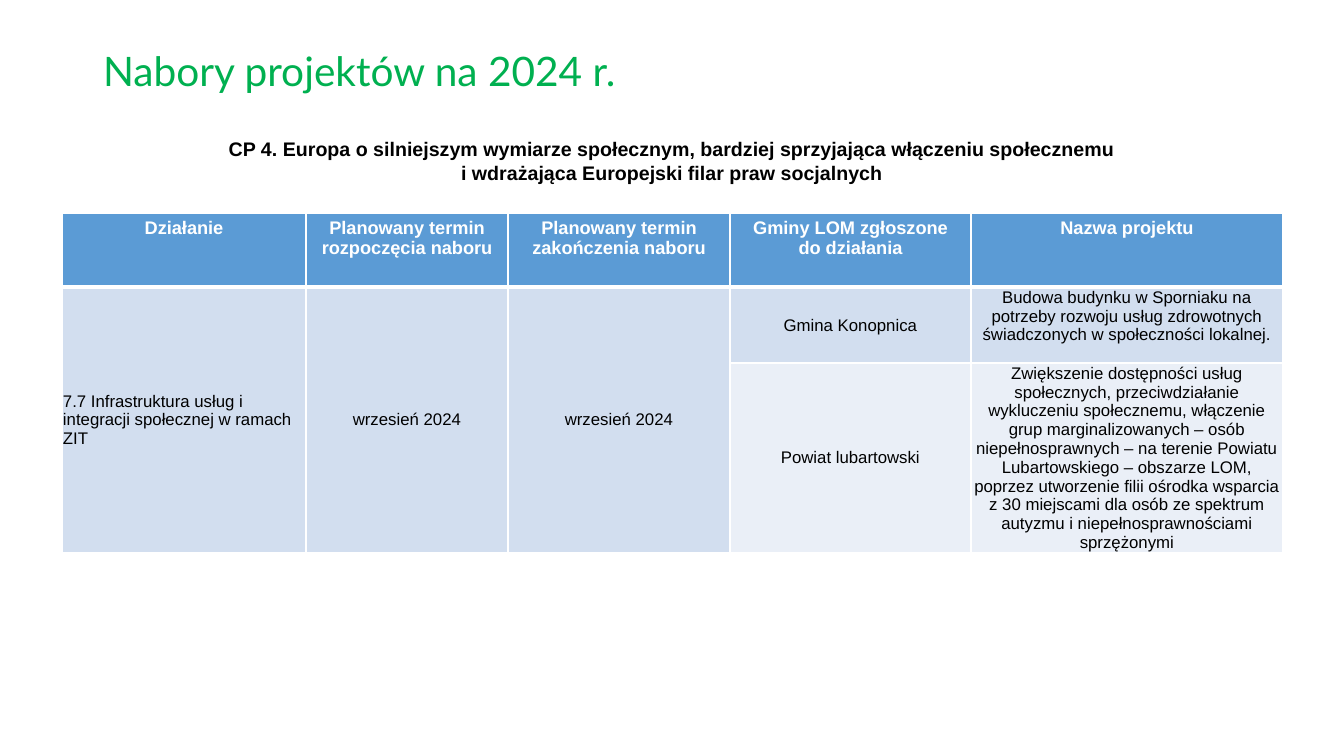
from lxml.etree import SubElement
from pptx import Presentation
from pptx.dml.color import RGBColor
from pptx.enum.text import MSO_ANCHOR, MSO_AUTO_SIZE, PP_ALIGN
from pptx.oxml.ns import qn
from pptx.util import Emu, Pt

EMU_PER_PX = 12192000 / 1344
GREEN = RGBColor(0x00, 0xB0, 0x50)
BLACK = RGBColor(0x00, 0x00, 0x00)
WHITE = RGBColor(0xFF, 0xFF, 0xFF)
HEADER_BLUE = RGBColor(0x5B, 0x9B, 0xD5)
BAND_DARK = RGBColor(0xD2, 0xDE, 0xEF)
BAND_LIGHT = RGBColor(0xEA, 0xEF, 0xF7)

COLUMN_WIDTHS = [244, 202, 222, 241, 312]
ROW_HEIGHTS = [74, 76, 189]
ROW_FILLS = [HEADER_BLUE, BAND_DARK, BAND_LIGHT]
MERGED_COLUMNS = 3
ROWS = [
    ["Działanie", "Planowany termin rozpoczęcia naboru",
     "Planowany termin zakończenia naboru",
     "Gminy LOM zgłoszone do działania", "Nazwa projektu"],
    ["7.7 Infrastruktura usług i integracji społecznej w ramach ZIT",
     "wrzesień 2024", "wrzesień 2024", "Gmina Konopnica",
     "Budowa budynku w Sporniaku na potrzeby rozwoju usług zdrowotnych "
     "świadczonych w społeczności lokalnej."],
    ["", "", "", "Powiat lubartowski",
     "Zwiększenie dostępności usług społecznych, przeciwdziałanie "
     "wykluczeniu społecznemu, włączenie grup marginalizowanych – osób "
     "niepełnosprawnych – na terenie Powiatu Lubartowskiego – obszarze LOM, "
     "poprzez utworzenie filii ośrodka wsparcia z 30 miejscami dla osób ze "
     "spektrum autyzmu i niepełnosprawnościami sprzężonymi"],
]
CAPTION = ("CP 4. Europa o silniejszym wymiarze społecznym, bardziej "
           "sprzyjająca włączeniu społecznemu\n"
           "i wdrażająca Europejski filar praw socjalnych")


def px(length):
    return Emu(round(length * EMU_PER_PX))


def write_text(text_frame, text, size, color=BLACK, font="Arial", bold=False,
               align=PP_ALIGN.CENTER, line_spacing=None):
    text_frame.text = text
    for paragraph in text_frame.paragraphs:
        paragraph.alignment = align
        paragraph.line_spacing = line_spacing
        for run in paragraph.runs:
            run.font.size = Pt(size)
            run.font.name = font
            run.font.bold = bold
            run.font.color.rgb = color


def set_title(slide, text):
    title = slide.shapes.title
    title.left, title.top, title.width, title.height = map(px, (93, 0, 1159, 146))
    title.text_frame.vertical_anchor = MSO_ANCHOR.MIDDLE
    write_text(title.text_frame, text, 29, color=GREEN, font="Lato",
               align=PP_ALIGN.LEFT, line_spacing=0.9)


def add_caption(slide, text):
    caption = slide.shapes.add_textbox(px(214), px(132), px(916), px(82))
    caption.text_frame.word_wrap = False
    caption.text_frame.auto_size = MSO_AUTO_SIZE.SHAPE_TO_FIT_TEXT
    write_text(caption.text_frame, text, 14, bold=True)


def set_borders(cell, top, bottom):
    properties = cell._tc.get_or_add_tcPr()
    for side, width in (("L", 1), ("R", 1), ("T", top), ("B", bottom)):
        line = SubElement(properties, qn(f"a:ln{side}"), w=str(Pt(width)))
        fill = SubElement(line, qn("a:solidFill"))
        SubElement(fill, qn("a:srgbClr"), val=str(WHITE))


def format_cell(cell, text, row, column):
    header = row == 0
    set_borders(cell, 3 if row == 1 else 1, 3 if header else 1)
    cell.fill.solid()
    cell.fill.fore_color.rgb = ROW_FILLS[row]
    if header:
        write_text(cell.text_frame, text, 13, color=WHITE, bold=True)
        return
    cell.margin_left = cell.margin_right = cell.margin_top = px(1)
    cell.margin_bottom = 0
    top_aligned = row == 1 and column == len(COLUMN_WIDTHS) - 1
    cell.vertical_anchor = MSO_ANCHOR.TOP if top_aligned else MSO_ANCHOR.MIDDLE
    write_text(cell.text_frame, text, 12,
               align=PP_ALIGN.LEFT if column == 0 else PP_ALIGN.CENTER)


def add_projects_table(slide):
    frame = slide.shapes.add_table(
        len(ROWS), len(COLUMN_WIDTHS), px(62), px(213),
        px(sum(COLUMN_WIDTHS)), px(sum(ROW_HEIGHTS)))
    table = frame.table
    for column, width in zip(table.columns, COLUMN_WIDTHS):
        column.width = px(width)
    for row, height in zip(table.rows, ROW_HEIGHTS):
        row.height = px(height)
    for row, texts in enumerate(ROWS):
        for column, text in enumerate(texts):
            format_cell(table.cell(row, column), text, row, column)
    for column in range(MERGED_COLUMNS):
        table.cell(1, column).merge(table.cell(2, column))


def main():
    presentation = Presentation()
    presentation.slide_width = px(1344)
    presentation.slide_height = px(756)
    slide = presentation.slides.add_slide(presentation.slide_layouts[5])
    set_title(slide, "Nabory projektów na 2024 r.")
    add_projects_table(slide)
    add_caption(slide, CAPTION)
    presentation.save("out.pptx")


if __name__ == "__main__":
    main()
